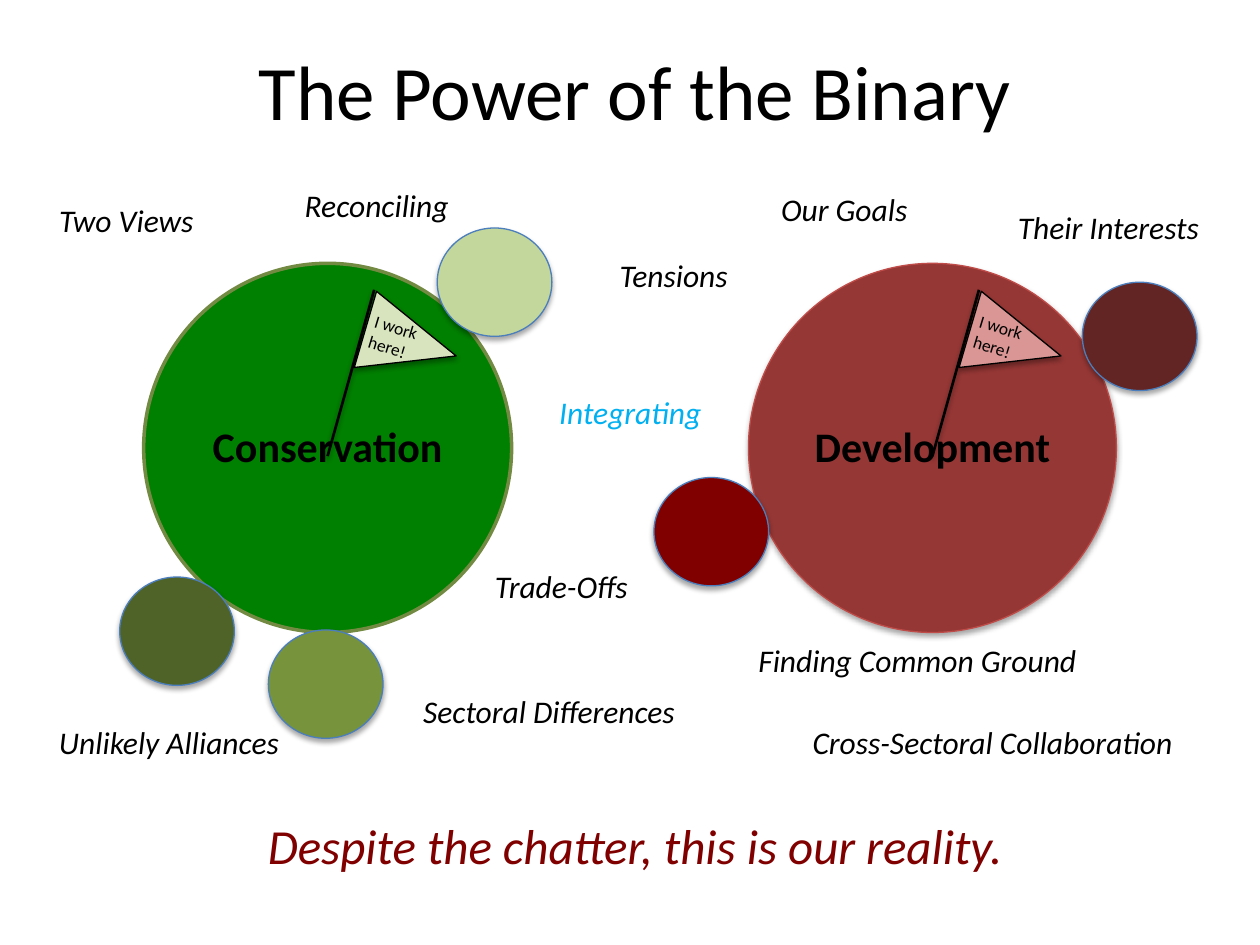
from dataclasses import dataclass

from lxml import etree
from pptx import Presentation
from pptx.dml.color import RGBColor
from pptx.enum import shapes, text
from pptx.oxml import ns
from pptx import util as u


@dataclass(frozen=True)
class Theme:
    """Colours, font and type sizes of the slide."""
    font: str = "Calibri"
    ink: str = "000000"
    green: str = "008000"
    green_edge: str = "738A42"
    red: str = "953735"
    red_edge: str = "BF4C48"
    satellite_edge: str = "4B7EBC"
    accent: str = "00B0F0"
    closing: str = "800000"
    green_flag: str = "D7E4BD"
    red_flag: str = "D99694"
    title_size: int = 44
    closing_size: int = 28
    hub_size: int = 24
    label_size: int = 18
    flag_size: int = 10


T = Theme()
COLUMNS, ROWS = 100, 75
WIDTH, HEIGHT = u.Inches(10), u.Inches(7.5)
BAND_WIDTH, BAND_HEIGHT = 90, 12.5
HUB_STEP = 48

SATELLITES = [
    (34.7, 18.1, "C3D69B"),
    (21.3, 50, "77933C"),
    (51.9, 37.9, "800000"),
    (85.9, 22.4, "632523"),
    (9.5, 45.8, "4F6228"),
]
LABELS = [
    ("Two Views", 3.7, 15.5, 13.5),
    ("Unlikely Alliances", 3.7, 56.9, 20.4),
    ("Sectoral Differences", 32.6, 54.4, 22.9),
    ("Trade-Offs", 38.3, 44.5, 13.4),
    ("Tensions", 48.2, 19.8, 11.5),
    ("Reconciling", 23.2, 14.3, 14.2),
    ("Finding Common Ground", 59.2, 50.4, 28.1),
    ("Our Goals", 61, 14.6, 12.8),
    ("Their Interests", 79.8, 16, 17.3),
    ("Cross-Sectoral Collaboration", 63.5, 56.9, 31.5),
]


def grid(x, y, *size):
    """Turn columns and rows, as a point or a box, into slide lengths."""
    pairs = zip((x, y, *size), (WIDTH / COLUMNS, HEIGHT / ROWS) * 2)
    return [u.Emu(round(n * unit)) for n, unit in pairs]


def set_shadow(s, alpha=None):
    """Give a shape a soft shadow below it, or none without an alpha."""
    effects = etree.SubElement(s._element.spPr, ns.qn("a:effectLst"))
    if alpha:
        shadow = etree.SubElement(
            effects, ns.qn("a:outerShdw"), blurRad=str(u.Pt(3.1)),
            dist=str(u.Pt(1.8)), dir="5400000", rotWithShape="0")
        color = etree.SubElement(shadow, ns.qn("a:srgbClr"), val=T.ink)
        etree.SubElement(color, ns.qn("a:alpha"), val=str(alpha * 1000))


def add_shape(parent, kind, box, fill, edge=None, weight=0.75, alpha=35):
    """Add a filled preset shape."""
    s = parent.shapes.add_shape(kind, *grid(*box))
    s.fill.solid()
    s.fill.fore_color.rgb = RGBColor.from_string(fill)
    if edge:
        s.line.color.rgb = RGBColor.from_string(edge)
        s.line.width = u.Pt(weight)
    else:
        s.line.fill.background()
    set_shadow(s, alpha)
    return s


def set_text(s, content, size, color=T.ink, align=text.PP_ALIGN.LEFT,
             anchor=text.MSO_ANCHOR.TOP, wrap=True, bold=False, italic=False):
    """Write one formatted paragraph into a shape."""
    tf = s.text_frame
    tf.text = content
    tf.word_wrap, tf.vertical_anchor = wrap, anchor
    p = tf.paragraphs[0]
    p.alignment = align
    font = p.runs[0].font
    font.name, font.size = T.font, u.Pt(size)
    font.bold, font.italic = bold, italic
    font.color.rgb = RGBColor.from_string(color)


def add_text(parent, box, content, size, **style):
    """Add a text box."""
    s = parent.shapes.add_textbox(*grid(*box))
    set_text(s, content, size, **style)
    return s


def add_label(parent, content, x, y, width, color=T.ink):
    """Add a one-line italic label."""
    s = add_text(parent, (x, y, width, 4), content, T.label_size,
                 color=color, wrap=False, italic=True)
    s.text_frame.auto_size = text.MSO_AUTO_SIZE.SHAPE_TO_FIT_TEXT


def add_hub(slide, x, name, fill, edge, weight, alpha, plate):
    """Add a large circle with its name, on a plate if asked."""
    group = slide.shapes.add_group_shape()
    add_shape(group, shapes.MSO_SHAPE.OVAL, (x, 20.9, 29.2, 29.3),
              fill, edge, weight, alpha)
    box = (x + 4, 32.9, 21.2, 5)
    if plate:
        s = add_shape(group, shapes.MSO_SHAPE.RECTANGLE, box, fill, alpha=None)
    else:
        s = group.shapes.add_textbox(*grid(*box))
    set_text(s, name, T.hub_size, align=text.PP_ALIGN.CENTER, bold=True)


def add_flag(slide, x, fill):
    """Add a pole with a tilted pennant and its words."""
    group = slide.shapes.add_group_shape()
    pole = group.shapes.add_connector(
        shapes.MSO_CONNECTOR.STRAIGHT, *grid(x, 36.2), *grid(x + 3.7, 23))
    pole.line.color.rgb = RGBColor.from_string(T.ink)
    pole.line.width = u.Pt(1.5)
    set_shadow(pole, 38)
    pennant = add_shape(group, shapes.MSO_SHAPE.ISOSCELES_TRIANGLE,
                        (x + 3.45, 23.45, 6.3, 7.5), fill, T.ink)
    pennant.rotation = 106.3
    words = add_text(group, (x + 2.45, 24.8, 6.8, 4.4), "I work here!",
                     T.flag_size)
    words.rotation = 16.9


def main():
    """Build the slide and save it."""
    prs = Presentation()
    prs.slide_width, prs.slide_height = WIDTH, HEIGHT
    slide = prs.slides.add_slide(prs.slide_layouts[5])
    center = dict(align=text.PP_ALIGN.CENTER, anchor=text.MSO_ANCHOR.MIDDLE)

    title = slide.shapes.title
    title.left, title.top, title.width, title.height = grid(
        5.4, 0.9, BAND_WIDTH, BAND_HEIGHT)
    set_text(title, "The Power of the Binary", T.title_size, **center)

    add_hub(slide, 11.4, "Conservation", T.green, T.green_edge, 2, None, False)
    add_hub(slide, 11.4 + HUB_STEP, "Development", T.red, T.red_edge,
            0.75, 35, True)
    for x, y, fill in SATELLITES:
        add_shape(slide, shapes.MSO_SHAPE.OVAL, (x, y, 9.1, 8.6),
                  fill, T.satellite_edge)

    add_text(slide, (5.4, 60.8, BAND_WIDTH, BAND_HEIGHT),
             "Despite the chatter, this is our reality.", T.closing_size,
             color=T.closing, italic=True, **center)
    chatter = slide.shapes.add_group_shape()
    for label in LABELS:
        add_label(chatter, *label)
    add_label(slide, "Integrating", 43.4, 30.7, 13.4, T.accent)

    for i, fill in enumerate((T.green_flag, T.red_flag)):
        add_flag(slide, 26 + i * HUB_STEP, fill)
    prs.save("out.pptx")


if __name__ == "__main__":
    main()
